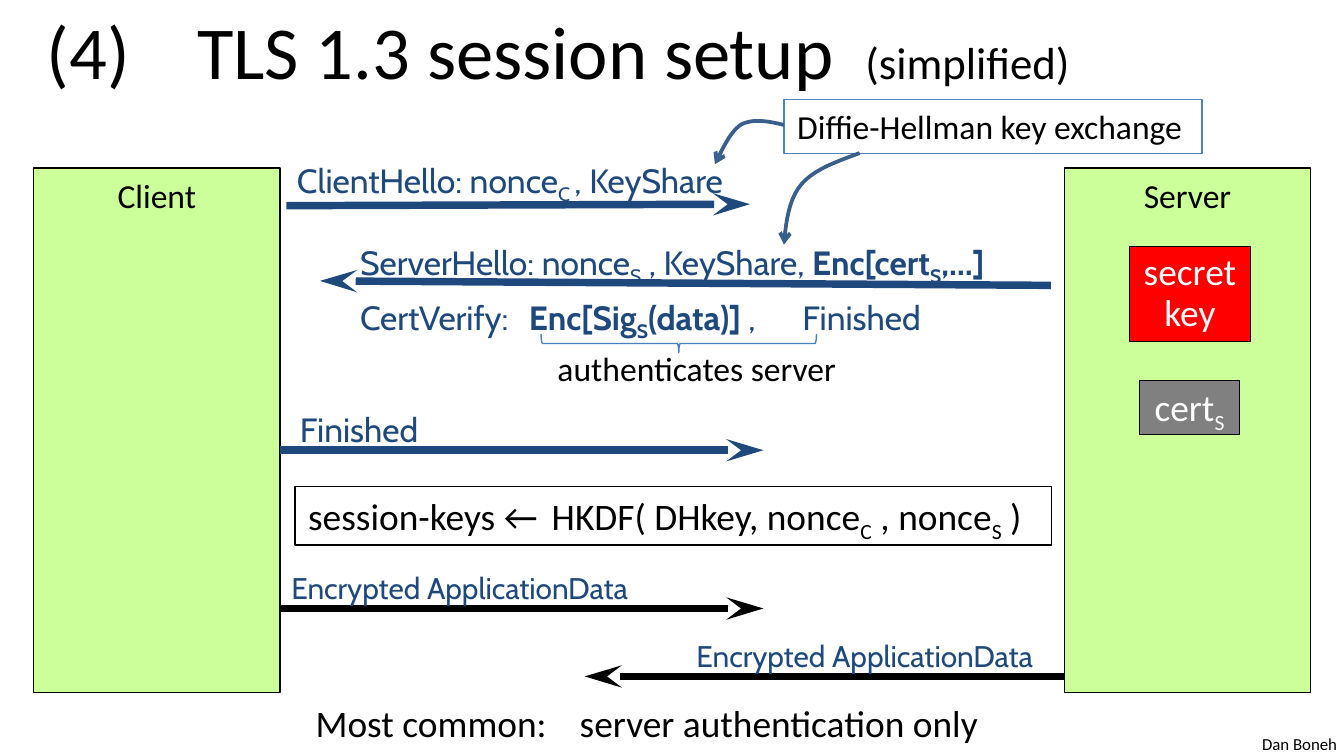
"""Builds a slide on the TLS 1.3 session setup."""
from lxml import etree
from pptx import Presentation
from pptx.dml.color import RGBColor
from pptx.enum.shapes import MSO_CONNECTOR, MSO_SHAPE
from pptx.enum.text import MSO_ANCHOR, PP_ALIGN
from pptx.oxml.ns import qn
from pptx.util import Pt

STRAIGHT = MSO_CONNECTOR.STRAIGHT
RECT, BRACE = MSO_SHAPE.RECTANGLE, MSO_SHAPE.RIGHT_BRACE
TOP, MIDDLE = MSO_ANCHOR.TOP, MSO_ANCHOR.MIDDLE
LEFT, CENTER = PP_ALIGN.LEFT, PP_ALIGN.CENTER

BLACK = RGBColor(0, 0, 0)
WHITE = RGBColor(255, 255, 255)
NAVY = RGBColor(0x1F, 0x49, 0x7D)
BLUE = RGBColor(0x4F, 0x81, 0xBD)
STEEL = RGBColor(0x3A, 0x5F, 0x8C)
AZURE = RGBColor(0x4B, 0x7E, 0xBC)
LIME = RGBColor(0xCC, 0xFF, 0x99)
RED = RGBColor(255, 0, 0)
GRAY = RGBColor(128, 128, 128)


class Deck:
    """Holds the style and the current slide."""

    sans, round = "Calibri", "Cabin"

    def __init__(self):
        self.show = Presentation()
        self.show.slide_width, self.show.slide_height = Pt(720), Pt(405)
        self.slide = self.show.slides.add_slide(self.show.slide_layouts[6])
        self.shapes = self.slide.shapes

    def label(self, shape, lines, size, color=BLACK, face=sans, align=LEFT,
              anchor=TOP, space=None, tabs=()):
        """Each line is a list of (text, marks, size): b is bold, s is subscript."""
        frame = shape.text_frame
        frame.word_wrap = align == LEFT
        frame.vertical_anchor = anchor
        for index, line in enumerate(lines):
            para = frame.add_paragraph() if index else frame.paragraphs[0]
            para.alignment = align
            para.line_spacing = space
            if tabs:
                stops = etree.SubElement(para._p.get_or_add_pPr(), qn("a:tabLst"))
                for stop in tabs:
                    etree.SubElement(stops, qn("a:tab"), pos=str(Pt(stop)), algn="l")
            font = para.font
            font.name, font.size, font.color.rgb = face, Pt(size), color
            for text, marks, own in line:
                run = para.add_run()
                run.text = text
                if "b" in marks:
                    run.font.bold = True
                if "s" in marks:
                    run._r.get_or_add_rPr().set("baseline", "-25000")
                if own:
                    run.font.size = Pt(own)

    def text(self, x, y, w, h, lines, size, **style):
        box = self.shapes.add_textbox(Pt(x), Pt(y), Pt(w), Pt(h))
        self.label(box, lines, size, **style)

    def shape(self, kind, x, y, w, h, fill=None, edge=BLACK):
        item = self.shapes.add_shape(kind, Pt(x), Pt(y), Pt(w), Pt(h))
        self.paint(item, edge, 0.75, fill)
        return item

    def box(self, x, y, w, h, lines, size, fill=None, edge=BLACK, **style):
        self.label(self.shape(RECT, x, y, w, h, fill, edge), lines, size, **style)

    def paint(self, item, edge, width, fill=None):
        item.shadow.inherit = False
        if fill is None:
            item.fill.background()
        else:
            item.fill.solid()
            item.fill.fore_color.rgb = fill
        item.line.color.rgb, item.line.width = edge, Pt(width)

    def head(self, item, kind, length):
        etree.SubElement(item.line._get_or_add_ln(), qn("a:tailEnd"),
                         type=kind, w="med", len=length)

    def arrow(self, x1, y1, x2, y2, color):
        line = self.shapes.add_connector(STRAIGHT, Pt(x1), Pt(y1), Pt(x2), Pt(y2))
        line.line.color.rgb, line.line.width = color, Pt(4)
        self.head(line, "stealth", "lg")
        etree.SubElement(line._element.spPr, qn("a:effectLst"))

    def curve(self, *knots):
        """Draws joined cubic curves through every third knot."""
        steps, dots = 10, []
        for first in range(0, len(knots) - 1, 3):
            part = knots[first:first + 4]
            for step in range(1, steps + 1):
                t = step / steps
                rates = (1 - t) ** 3, 3 * t * (1 - t) ** 2, 3 * t * t * (1 - t), t ** 3
                dots.append(tuple(Pt(sum(r * k[axis] for r, k in zip(rates, part)))
                                  for axis in (0, 1)))
        trace = self.shapes.build_freeform(Pt(knots[0][0]), Pt(knots[0][1]))
        trace.add_line_segments(dots, close=False)
        item = trace.convert_to_shape()
        self.paint(item, STEEL, 2)
        self.head(item, "arrow", "med")


def plain(text):
    return [(text, "", None)]


def main():
    deck = Deck()
    navy = {"color": NAVY, "face": deck.round}
    badge = {"color": WHITE, "align": CENTER, "anchor": MIDDLE, "space": 0.9}

    deck.text(669, 389.5, 60, 18, [plain("Dan Boneh")], 9)
    deck.text(18, -7.2, 648, 67.7,
              [[("(4)\tTLS 1.3 session setup\t", "", None), ("(simplified)", "", 24)]],
              40, anchor=MIDDLE, tabs=(80.5, 438.5))

    deck.arrow(153.4, 110.2, 401.8, 109.4, NAVY)
    deck.text(152, 82.1, 257, 29,
              [[("ClientHello: nonce", "", None), ("C ", "s", None),
                (", KeyShare", "", None)]], 18, **navy)
    deck.arrow(563, 152.9, 171.4, 150.5, NAVY)
    deck.text(185.8, 121, 391.7, 57,
              [[("ServerHello: nonce", "", None), ("S", "s", None),
                (" , KeyShare, ", "", None), ("Enc[cert", "b", None),
                ("S", "bs", None), (",…]", "b", None)],
               [("CertVerify:\t", "", None), ("Enc[Sig", "b", None),
                ("S", "bs", None), ("(data)] ", "b", None),
                (",\tFinished", "", None)]],
              18, space=1.2, tabs=(90.5, 237), **navy)

    for x, name in ((18, "Client"), (570.2, "Server")):
        deck.box(x, 90, 132, 281, [plain(name)], 18, LIME, align=CENTER)
    deck.box(605, 132, 65, 51, [plain("secret"), plain("key")], 20, RED, **badge)
    deck.box(610.5, 203.8, 53.5, 29, [[("cert", "", None), ("S", "s", None)]],
             20, GRAY, **badge)

    deck.arrow(150, 241.2, 409, 241.2, NAVY)
    deck.text(153.6, 215.3, 81, 29, [plain("Finished")], 18, **navy)
    deck.box(158, 260.6, 405.4, 31.5,
             [[("session-keys ←\tHKDF( DHkey, nonce", "", None), ("C", "s", None),
               (" , nonce", "", None), ("S", "s", None), (" )", "", None)]],
             20, tabs=(130.5,))

    deck.arrow(150, 326, 409, 326, BLACK)
    deck.arrow(570.2, 362.4, 313.2, 362.4, BLACK)
    for x, y in ((149, 301.7), (366, 338)):
        deck.text(x, y, 201, 26.6, [plain("Encrypted ApplicationData")], 16, **navy)

    deck.box(420, 53.3, 224, 29, [plain("Diffie-Hellman key exchange")], 18, edge=BLUE)
    deck.curve((420, 67), (412, 65), (404, 63.5), (397.5, 66.5),
               (391.5, 70), (387.5, 79), (383, 88))
    deck.curve((460.5, 82), (448.5, 86.5), (436.5, 90.5), (429.5, 98.5),
               (422.5, 106.5), (421, 119), (420, 131))

    deck.text(162, 371.5, 376, 31.5,
              [plain("Most common:\tserver authentication only")], 20, tabs=(141.5,))
    deck.shape(BRACE, 358.6, 110.2, 10, 147.6, edge=AZURE).rotation = 90
    deck.text(291.6, 182.9, 166, 29, [plain("authenticates server")], 18)
    deck.show.save("out.pptx")


if __name__ == "__main__":
    main()
